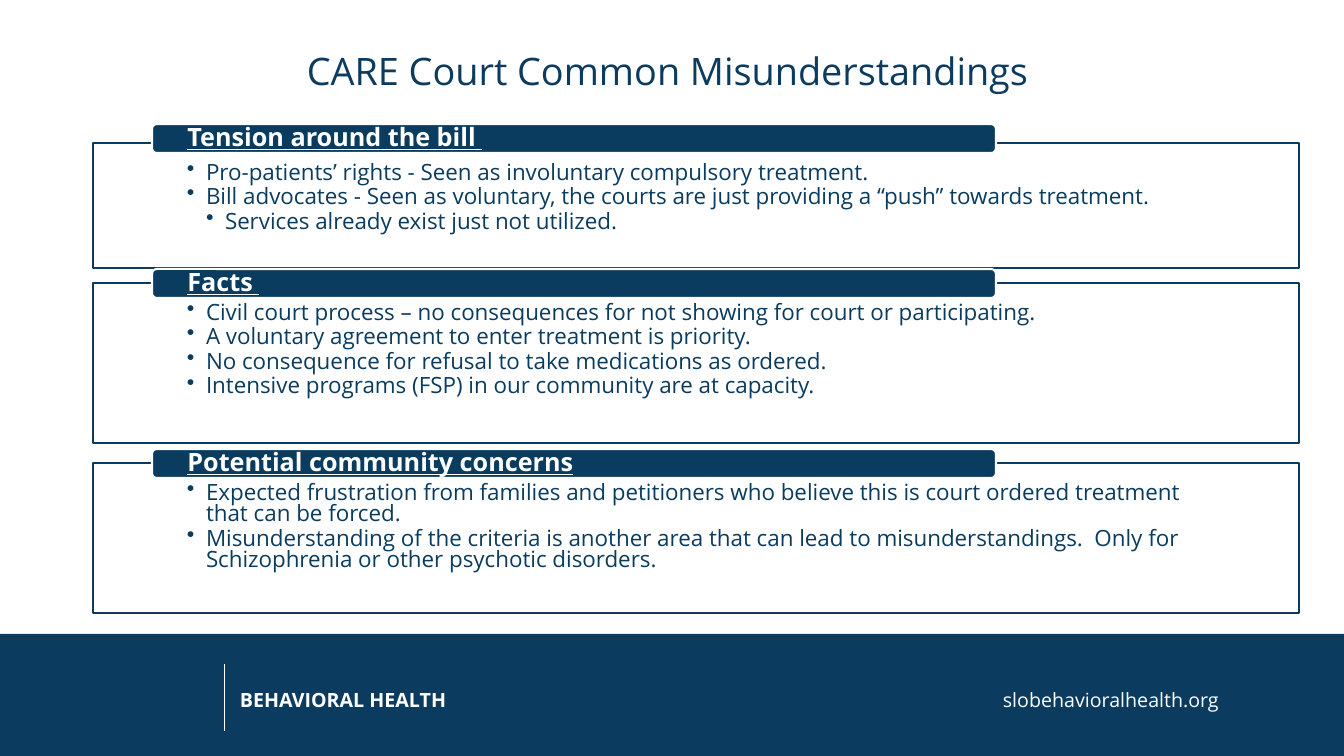
from dataclasses import dataclass

from lxml.etree import SubElement
from pptx import Presentation
from pptx.dml.color import RGBColor
from pptx.enum.shapes import MSO_CONNECTOR, MSO_SHAPE
from pptx.enum.text import MSO_ANCHOR, PP_ALIGN
from pptx.oxml.ns import qn
from pptx.shapes.autoshape import Shape
from pptx.slide import Slide
from pptx.text.text import TextFrame, _Paragraph, _Run
from pptx.util import Emu, Pt

NAVY = RGBColor(0x0A, 0x3C, 0x5F)
FOOTER_NAVY = RGBColor(0x0B, 0x3B, 0x5E)
WHITE = RGBColor(0xFF, 0xFF, 0xFF)
FONT = "Open Sans"
EMU_PER_PX = 914400 / 100.8

PANEL_LEFT, PANEL_WIDTH = 93, 1206
HEADING_LEFT, HEADING_WIDTH, HEADING_HEIGHT = 152, 844, 29
HEADING_RISE = 14
BULLET_INDENT = 19


@dataclass(frozen=True)
class Point:
    text: str
    level: int = 1


@dataclass(frozen=True)
class Section:
    heading: str
    top: int
    height: int
    points: tuple[Point, ...]
    heading_rise: int = HEADING_RISE


SECTIONS = (
    Section("Tension around the bill ", 143, 125, (
        Point("Pro-patients’ rights - Seen as involuntary compulsory treatment."),
        Point("Bill advocates - Seen as voluntary, the courts are just providing "
              "a “push” towards treatment."),
        Point("Services already exist just not utilized.", 2),
    ), heading_rise=19),
    Section("Facts ", 283, 160, (
        Point("Civil court process – no consequences for not showing for court "
              "or participating."),
        Point("A voluntary agreement to enter treatment is priority."),
        Point("No consequence for refusal to take medications as ordered."),
        Point("Intensive programs (FSP) in our community are at capacity."),
    )),
    Section("Potential community concerns", 463, 150, (
        Point("Expected frustration from families and petitioners who believe "
              "this is court ordered treatment that can be forced."),
        Point("Misunderstanding of the criteria is another area that can lead to "
              "misunderstandings.  Only for Schizophrenia or other psychotic disorders."),
    )),
)


def px(length: int) -> Emu:
    return Emu(round(length * EMU_PER_PX))


def format_run(run: _Run, size: int, color: RGBColor, bold: bool = False) -> None:
    run.font.name = FONT
    run.font.size = Pt(size)
    run.font.bold = bold
    run.font.color.rgb = color


def set_insets(frame: TextFrame, side: int, top: int, bottom: int) -> None:
    frame.word_wrap = True
    frame.margin_left = frame.margin_right = px(side)
    frame.margin_top, frame.margin_bottom = px(top), px(bottom)


def add_block(slide: Slide, kind: MSO_SHAPE, left: int, top: int, width: int,
              height: int, fill: RGBColor) -> Shape:
    block = slide.shapes.add_shape(kind, px(left), px(top), px(width), px(height))
    block.shadow.inherit = False
    block.fill.solid()
    block.fill.fore_color.rgb = fill
    return block


def add_bullet(paragraph: _Paragraph, level: int) -> None:
    paragraph.level = level
    properties = paragraph._p.get_or_add_pPr()
    properties.set("marL", str(px(BULLET_INDENT * level)))
    properties.set("indent", str(-px(BULLET_INDENT)))
    SubElement(properties, qn("a:buChar"), char="•")


def add_panel(slide: Slide, section: Section) -> None:
    panel = add_block(slide, MSO_SHAPE.RECTANGLE, PANEL_LEFT, section.top,
                      PANEL_WIDTH, section.height, WHITE)
    fill_color = panel._element.spPr.find(qn("a:solidFill"))[0]
    SubElement(fill_color, qn("a:alpha"), val="90000")
    panel.line.color.rgb = NAVY
    panel.line.width = Pt(1)
    frame = panel.text_frame
    frame.vertical_anchor = MSO_ANCHOR.TOP
    set_insets(frame, 94, 20, 12)
    for index, point in enumerate(section.points):
        paragraph = frame.add_paragraph() if index else frame.paragraphs[0]
        paragraph.text = point.text
        paragraph.alignment = PP_ALIGN.LEFT
        paragraph.line_spacing = 0.8
        paragraph.space_after = Pt(2.2)
        add_bullet(paragraph, point.level)
        format_run(paragraph.runs[0], 16, NAVY)


def add_heading(slide: Slide, section: Section) -> None:
    heading = add_block(slide, MSO_SHAPE.ROUNDED_RECTANGLE, HEADING_LEFT,
                        section.top - section.heading_rise, HEADING_WIDTH,
                        HEADING_HEIGHT, NAVY)
    heading.line.color.rgb = WHITE
    heading.line.width = Pt(1.5)
    frame = heading.text_frame
    frame.vertical_anchor = MSO_ANCHOR.MIDDLE
    set_insets(frame, 34, 0, 0)
    paragraph = frame.paragraphs[0]
    paragraph.text = section.heading
    paragraph.alignment = PP_ALIGN.LEFT
    paragraph.line_spacing = 0.9
    format_run(paragraph.runs[0], 18, WHITE, bold=True)
    paragraph.runs[0].font.underline = True


def add_title(slide: Slide) -> None:
    title = slide.shapes.title
    title.left, title.top, title.width, title.height = px(93), px(0), px(1159), px(146)
    title.text_frame.vertical_anchor = MSO_ANCHOR.MIDDLE
    paragraph = title.text_frame.paragraphs[0]
    paragraph.text = "CARE Court Common Misunderstandings "
    paragraph.alignment = PP_ALIGN.CENTER
    paragraph.line_spacing = 0.9
    format_run(paragraph.runs[0], 27, FOOTER_NAVY)


def add_footer(slide: Slide) -> None:
    band = add_block(slide, MSO_SHAPE.RECTANGLE, 0, 634, 1344, 122, FOOTER_NAVY)
    band.line.fill.background()

    label = slide.shapes.add_textbox(px(230), px(681), px(1008), px(34))
    label.text_frame.word_wrap = True
    paragraph = label.text_frame.paragraphs[0]
    paragraph.text = "BEHAVIORAL HEALTH\t"
    paragraph.line_spacing = Pt(18)
    tabs = SubElement(paragraph._p.get_or_add_pPr(), qn("a:tabLst"))
    SubElement(tabs, qn("a:tab"), pos=str(px(763)), algn="l")
    format_run(paragraph.runs[0], 14, WHITE, bold=True)
    website = paragraph.add_run()
    website.text = "slobehavioralhealth.org"
    format_run(website, 14, WHITE)

    divider = slide.shapes.add_connector(MSO_CONNECTOR.STRAIGHT, px(224), px(664),
                                         px(224), px(731))
    divider.line.color.rgb = WHITE
    divider.line.width = Pt(0.5)
    SubElement(divider._element.spPr, qn("a:effectLst"))


def main() -> None:
    presentation = Presentation()
    presentation.slide_width, presentation.slide_height = px(1344), px(756)
    slide = presentation.slides.add_slide(presentation.slide_layouts[5])
    add_footer(slide)
    add_title(slide)
    for section in SECTIONS:
        add_panel(slide, section)
        add_heading(slide, section)
    presentation.save("out.pptx")


if __name__ == "__main__":
    main()
